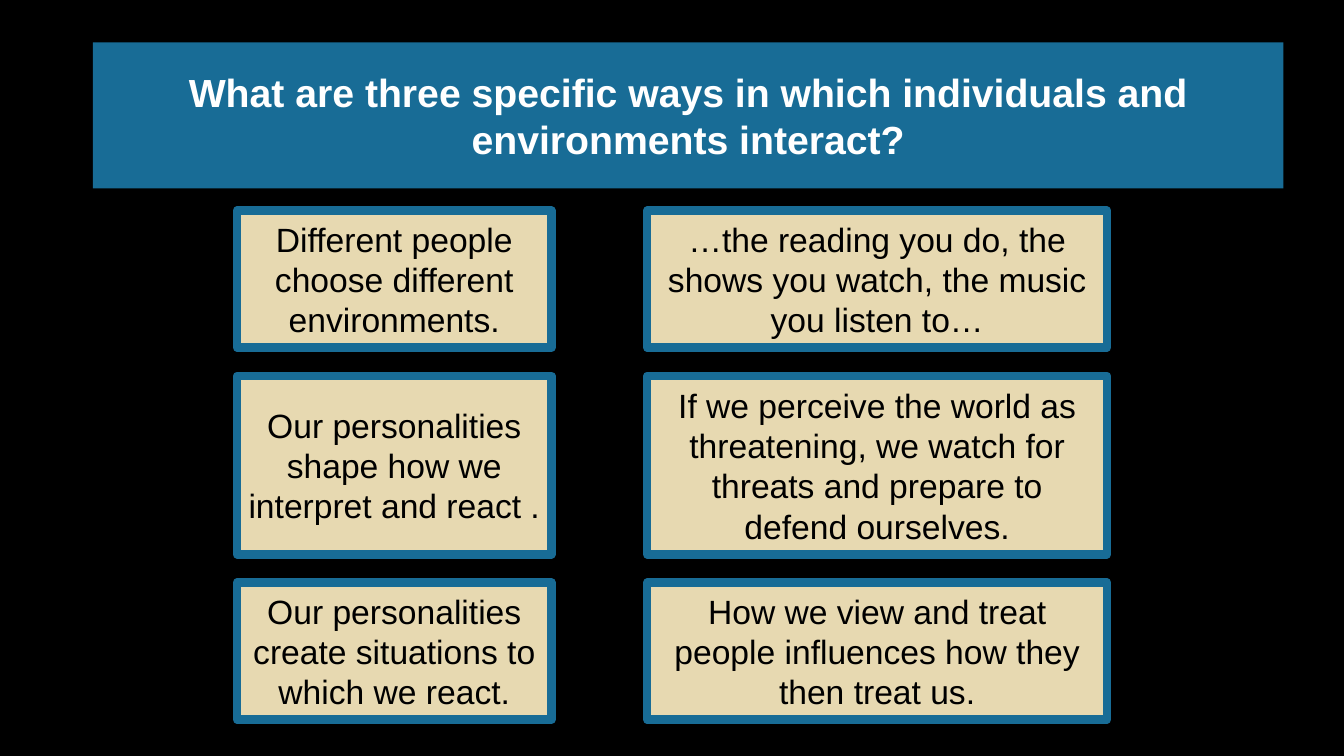
"""Build a slide on three ways individuals and environments interact."""
from dataclasses import dataclass

from pptx import Presentation
from pptx.dml.color import RGBColor
from pptx.enum.shapes import MSO_SHAPE
from pptx.enum.text import MSO_ANCHOR, PP_ALIGN
from pptx.slide import Slide
from pptx.util import Inches, Pt

BLACK = RGBColor(0x00, 0x00, 0x00)
WHITE = RGBColor(0xFF, 0xFF, 0xFF)
BLUE = RGBColor(0x18, 0x6C, 0x96)
SAND = RGBColor(0xE7, 0xD9, 0xB1)

TITLE = {"name": "Arial", "size": Pt(28), "bold": True}
BODY = {"name": "Arial", "size": Pt(24), "bold": False}
FRAME = {"word_wrap": True, "vertical_anchor": MSO_ANCHOR.MIDDLE}

COLUMNS = ((2.35, 3.12), (6.42, 4.56))
TOP = 2.09
GAP = 0.28


@dataclass
class Panel:
    left: float
    top: float
    width: float
    height: float
    lines: tuple[str, ...]
    fill: RGBColor = SAND
    ink: RGBColor = BLACK
    edge: bool = True


@dataclass
class Row:
    height: float
    cause: tuple[str, ...]
    sample: tuple[str, ...]


ROWS = (
    Row(1.36, ("Different people choose different environments.",),
        ("…the reading you do, the shows you watch, the music you listen to…",)),
    Row(1.77, ("Our personalities shape how we interpret and react .",),
        ("If we perceive the world as threatening, we watch for threats "
         "and prepare to defend ourselves.",)),
    Row(1.36, ("Our personalities create situations to which we react.",),
        ("How we view and treat", "people influences how they then treat us.")),
)


def apply(target: object, values: dict) -> None:
    for name, value in values.items():
        setattr(target, name, value)


def draw(slide: Slide, panel: Panel, style: dict) -> None:
    shape = slide.shapes.add_shape(
        MSO_SHAPE.RECTANGLE, Inches(panel.left), Inches(panel.top),
        Inches(panel.width), Inches(panel.height))
    shape.shadow.inherit = False
    shape.fill.solid()
    shape.fill.fore_color.rgb = panel.fill
    if panel.edge:
        shape.line.color.rgb = BLUE
        shape.line.width = Pt(6)
    else:
        shape.line.fill.background()
    frame = shape.text_frame
    apply(frame, FRAME)
    for index, line in enumerate(panel.lines):
        para = frame.add_paragraph() if index else frame.paragraphs[0]
        para.alignment = PP_ALIGN.CENTER
        run = para.add_run()
        run.text = line
        apply(run.font, style)
        run.font.color.rgb = panel.ink


def main() -> None:
    deck = Presentation()
    deck.slide_width, deck.slide_height = Inches(13.33), Inches(7.5)
    slide = deck.slides.add_slide(deck.slide_layouts[6])
    slide.background.fill.solid()
    slide.background.fill.fore_color.rgb = BLACK

    title = ("What are three specific ways in which individuals "
             "and environments interact?",)
    draw(slide, Panel(0.92, 0.42, 11.81, 1.45, title, BLUE, WHITE, False), TITLE)

    top = TOP
    for row in ROWS:
        for (left, width), lines in zip(COLUMNS, (row.cause, row.sample)):
            draw(slide, Panel(left, top, width, row.height, lines), BODY)
        top += row.height + GAP

    deck.save("out.pptx")


if __name__ == "__main__":
    main()
